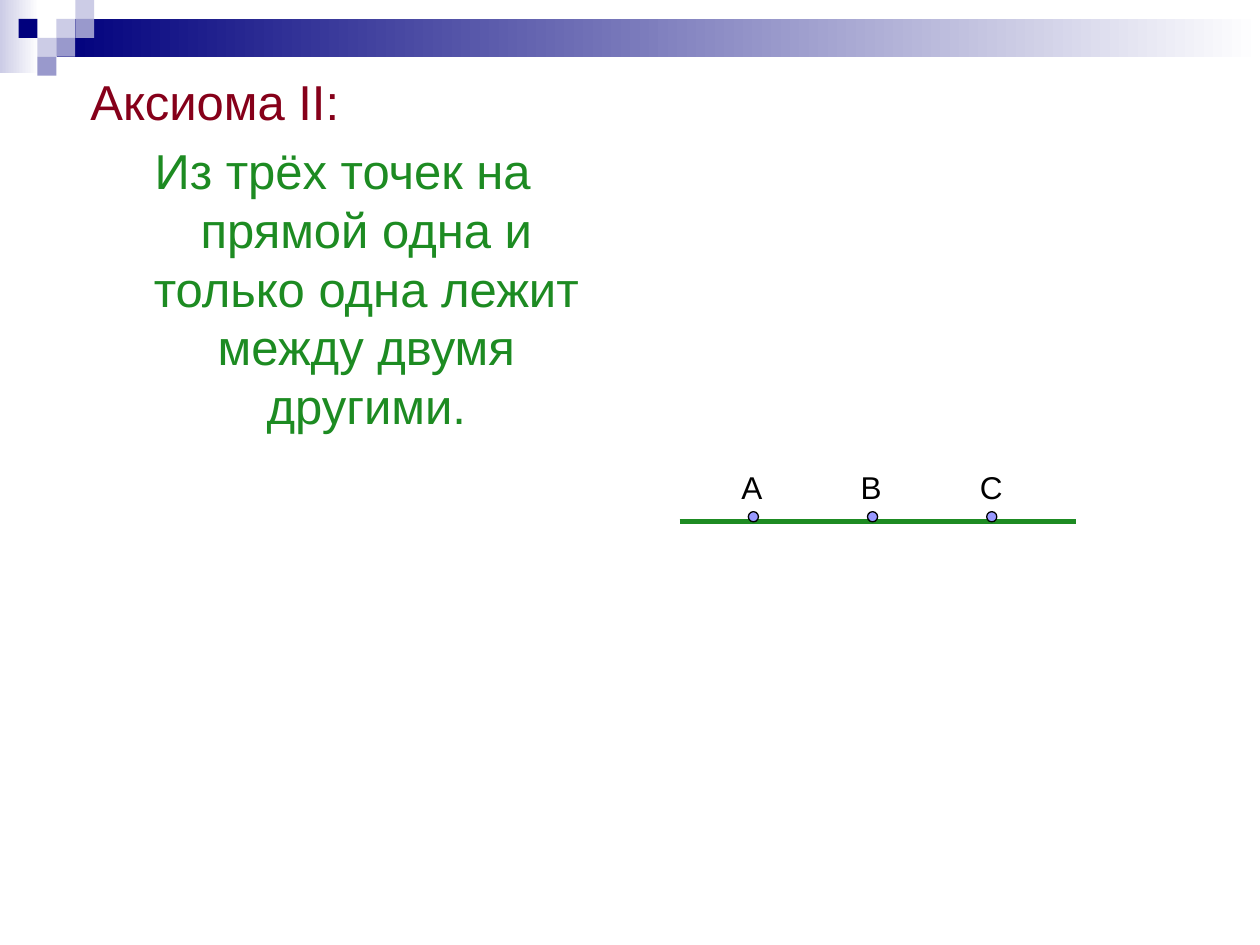
from lxml import etree
from pptx import Presentation
from pptx.dml.color import RGBColor
from pptx.enum.shapes import MSO_CONNECTOR, MSO_SHAPE
from pptx.enum.text import MSO_ANCHOR, MSO_AUTO_SIZE, PP_ALIGN
from pptx.oxml.ns import qn
from pptx.util import Pt

RECTANGLE, OVAL = MSO_SHAPE.RECTANGLE, MSO_SHAPE.OVAL
LEFT, CENTER = PP_ALIGN.LEFT, PP_ALIGN.CENTER
FONT = "Arial"
COLORS = {
    "navy": "00007D", "lavender": "CCCCE6", "violet": "9999CC", "white": "FFFFFF",
    "maroon": "86001A", "green": "1D8B22", "point": "9999FF", "black": "000000",
}

# Content: text, color, alignment
AXIOM = [
    (" Аксиома II:", "maroon", LEFT),
    ("Из трёх точек на прямой одна и только одна лежит между двумя другими.",
     "green", CENTER),
]
POINTS = ["А", "В", "С"]

# Header decoration: gradient bands (left, top, width, height, start color)
BANDS = [(0, 0, 22.3, 41.8, "lavender"), (32.4, 10.8, 687.6, 21.6, "navy")]
# Mosaic squares: column, row, color
TILE, MOSAIC_LEFT = 10.8, 10.6
MOSAIC = [
    (2, 1, "lavender"), (3, 0, "lavender"), (3, 1, "violet"), (1, 2, "lavender"),
    (0, 1, "navy"), (2, 2, "violet"), (1, 3, "violet"),
]

# Diagram geometry
LINE_LEFT, LINE_RIGHT, LINE_TOP = 388.3, 615, 298.2
POINT_LEFT, POINT_TOP, POINT_SIZE, POINT_STEP = 427.6, 292.4, 5.8, 68.1
LABEL_OFFSET, LABEL_TOP, LABEL_WIDTH, LABEL_HEIGHT = -11, 264, 27, 29


def rgb(name):
    return RGBColor.from_string(COLORS[name])


def add_shape(slide, kind, left, top, width, height, color):
    shape = slide.shapes.add_shape(kind, Pt(left), Pt(top), Pt(width), Pt(height))
    shape.shadow.inherit = False
    shape.fill.solid()
    shape.fill.fore_color.rgb = rgb(color)
    shape.line.fill.background()
    return shape


def set_text(paragraph, text, size, color, alignment=LEFT):
    paragraph.text = text
    paragraph.alignment = alignment
    paragraph.font.name = FONT
    paragraph.font.size = Pt(size)
    paragraph.font.color.rgb = rgb(color)


presentation = Presentation()
presentation.slide_width, presentation.slide_height = Pt(720), Pt(540)
slide = presentation.slides.add_slide(presentation.slide_layouts[1])
title = slide.shapes.title
title.element.getparent().remove(title.element)

# Header decoration
for left, top, width, height, color in BANDS:
    band = add_shape(slide, RECTANGLE, left, top, width, height, color)
    band.fill.gradient()
    band.fill.gradient_angle = 0
    for stop, stop_color, position in zip(band.fill.gradient_stops, (color, "white"), (0, 1)):
        stop.color.rgb = rgb(stop_color)
        stop.position = position
for column, row, color in MOSAIC:
    add_shape(slide, RECTANGLE, MOSAIC_LEFT + column * TILE, row * TILE, TILE, TILE, color)

# Axiom text
body = slide.placeholders[1]
body.left, body.top, body.width, body.height = Pt(36.7), Pt(37.4), Pt(318.2), Pt(459.4)
frame = body.text_frame
frame.vertical_anchor = MSO_ANCHOR.TOP
for index, (text, color, alignment) in enumerate(AXIOM):
    paragraph = frame.paragraphs[0] if index == 0 else frame.add_paragraph()
    set_text(paragraph, text, 28, color, alignment)
    paragraph.space_before = Pt(5.6)
    properties = paragraph._p.get_or_add_pPr()
    properties.set("marL", str(Pt(27)))
    properties.set("indent", str(-Pt(27)))
    etree.SubElement(properties, qn("a:buNone"))

# Straight line
line = slide.shapes.add_connector(
    MSO_CONNECTOR.STRAIGHT, Pt(LINE_LEFT), Pt(LINE_TOP), Pt(LINE_RIGHT), Pt(LINE_TOP))
line.line.color.rgb = rgb("green")
line.line.width = Pt(3)
etree.SubElement(line._element.spPr, qn("a:effectLst"))

# Points on the line with their labels
for index, name in enumerate(POINTS):
    left = POINT_LEFT + index * POINT_STEP
    point = add_shape(slide, OVAL, left, POINT_TOP, POINT_SIZE, POINT_SIZE, "point")
    point.line.color.rgb = rgb("black")
    point.line.width = Pt(0.75)
    label = slide.shapes.add_textbox(
        Pt(left + LABEL_OFFSET), Pt(LABEL_TOP), Pt(LABEL_WIDTH), Pt(LABEL_HEIGHT))
    label.text_frame.word_wrap = True
    label.text_frame.auto_size = MSO_AUTO_SIZE.SHAPE_TO_FIT_TEXT
    set_text(label.text_frame.paragraphs[0], name, 18, "black")

presentation.save("out.pptx")
